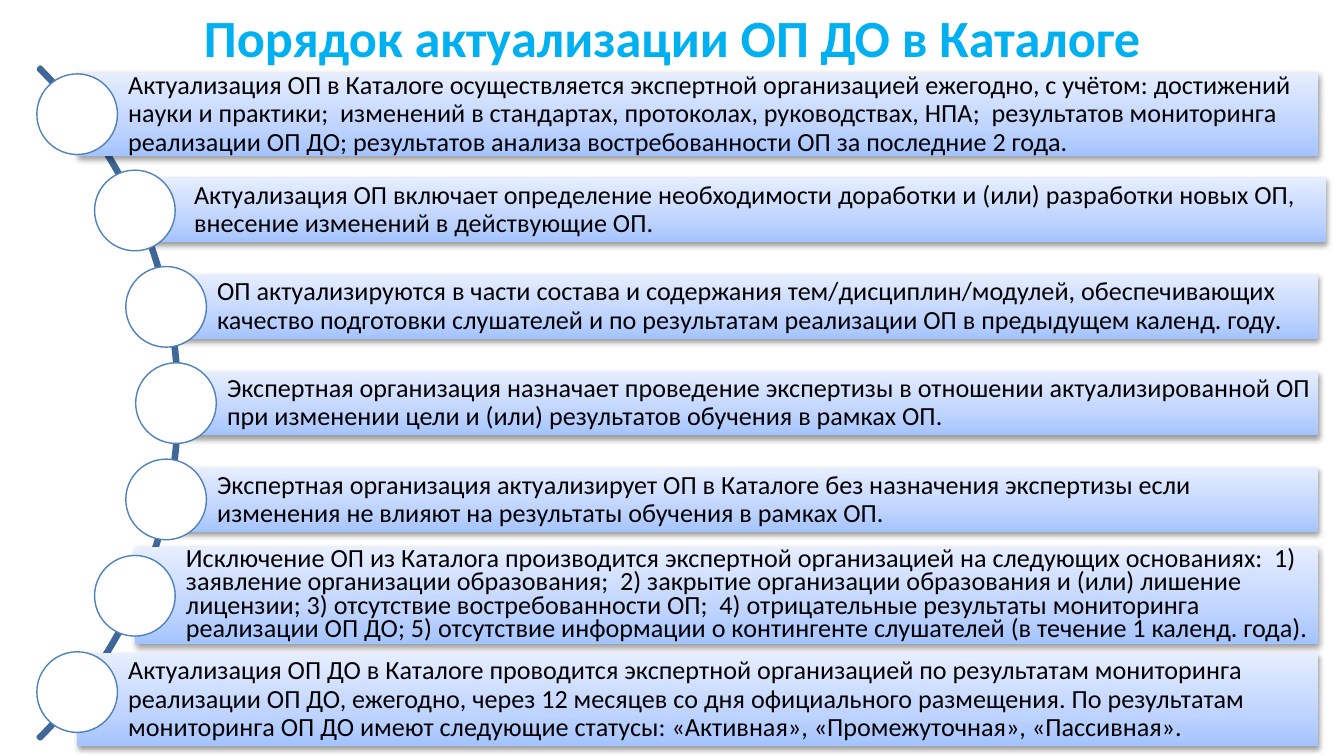
from math import sqrt
from pptx import Presentation
from pptx.dml.color import RGBColor
from pptx.enum.shapes import MSO_SHAPE
from pptx.enum.text import MSO_ANCHOR, MSO_AUTO_SIZE, PP_ALIGN
from pptx.oxml import parse_xml
from pptx.oxml.ns import nsdecls
from pptx.util import Inches, Pt

# Content: text, bar top, bar height, shift of the bar, line spacing
TITLE = "Порядок актуализации ОП ДО в Каталоге"
STEPS = [
    ("Актуализация ОП в Каталоге осуществляется экспертной организацией ежегодно, "
     "с учётом: достижений науки и практики;  изменений в стандартах, протоколах, "
     "руководствах, НПА;  результатов мониторинга реализации ОП ДО; результатов "
     "анализа востребованности ОП за последние 2 года.", 0.54, 0.62, 0, 0.9),
    ("Актуализация ОП включает определение необходимости доработки и (или) "
     "разработки новых ОП, внесение изменений в действующие ОП.",
     1.32, 0.48, 0.06, 0.9),
    ("ОП актуализируются в части состава и содержания тем/дисциплин/модулей, "
     "обеспечивающих качество подготовки слушателей и по результатам реализации "
     "ОП в предыдущем календ. году.", 2.04, 0.48, 0, 0.9),
    ("Экспертная организация назначает проведение экспертизы в отношении "
     "актуализированной ОП при изменении цели и (или) результатов обучения "
     "в рамках ОП.", 2.76, 0.48, 0, 0.9),
    ("Экспертная организация актуализирует ОП в Каталоге без назначения экспертизы "
     "если изменения не влияют на результаты обучения в рамках ОП.",
     3.48, 0.48, 0, 0.9),
    ("Исключение ОП из Каталога производится экспертной организацией на следующих "
     "основаниях:  1)  заявление организации образования;  2) закрытие организации "
     "образования и (или) лишение лицензии; 3) отсутствие востребованности ОП;  "
     "4) отрицательные результаты мониторинга реализации ОП ДО; 5) отсутствие "
     "информации о контингенте слушателей (в течение 1 календ. года).",
     4.07, 0.72, 0, 0.75),
    ("Актуализация ОП ДО в Каталоге проводится экспертной организацией по "
     "результатам мониторинга реализации ОП ДО, ежегодно, через 12 месяцев со дня "
     "официального размещения. По результатам мониторинга ОП ДО имеют следующие "
     "статусы: «Активная», «Промежуточная», «Пассивная».", 4.86, 0.69, 0, 0.9),
]

# Formats
SKY = RGBColor(0x00, 0xB0, 0xF0)
BLACK = RGBColor(0x00, 0x00, 0x00)
WHITE = RGBColor(0xFF, 0xFF, 0xFF)
NAVY = RGBColor(0x3F, 0x67, 0x97)
BLUE = RGBColor(0x4F, 0x81, 0xBD)
STOPS = [(0, "A4C4FF"), (35, "BFD4FF"), (100, "E6EEFF")]
HEAD = {"name": "Calibri", "size": Pt(28), "bold": True}
BODY = {"name": "Calibri", "size": Pt(14)}
FRAME = {"word_wrap": True, "auto_size": MSO_AUTO_SIZE.NONE,
         "vertical_anchor": MSO_ANCHOR.MIDDLE}
PAD = {"margin_left": Inches(0.38), "margin_top": Inches(0.04),
       "margin_right": Inches(0.04), "margin_bottom": Inches(0.04)}

# Geometry: circles sit on an arc, bars start at their centres
WIDE = 10
TALL = WIDE * 9 / 16
MID_X, MID_Y, RADIUS = -2.2, 3.0, 3.51
ARC, DOT, RIGHT = 7.07, 0.6, 9.81
PITCH = 4.3 / (len(STEPS) - 1)


def apply(item, values):
    for key, value in values.items():
        setattr(item, key, value)


def write(frame, text, font, color, align, gap=None):
    apply(frame, FRAME)
    para = frame.paragraphs[0]
    apply(para, {"alignment": align, "line_spacing": gap})
    run = para.add_run()
    run.text = text
    apply(run.font, font)
    run.font.color.rgb = color


def add(kind, left, top, width, height):
    shape = slide.shapes.add_shape(
        kind, Inches(left), Inches(top), Inches(width), Inches(height))
    shape.shadow.inherit = False
    return shape


def shade(shape):
    """Give a bar its three-stop gradient and soft shadow."""
    shape.fill.background()
    shape.line.fill.background()
    props = shape.element.spPr
    stops = "".join(f'<a:gs pos="{pos * 1000}"><a:srgbClr val="{color}"/></a:gs>'
                    for pos, color in STOPS)
    grad = parse_xml(f'<a:gradFill {nsdecls("a")} rotWithShape="1"><a:gsLst>{stops}'
                     '</a:gsLst><a:lin ang="16200000" scaled="0"/></a:gradFill>')
    props.replace(props.find("{*}noFill"), grad)
    cast = parse_xml(
        f'<a:outerShdw {nsdecls("a")} blurRad="{Pt(3.1)}" dist="{Pt(1.6)}" '
        'dir="5400000" rotWithShape="0"><a:srgbClr val="000000">'
        '<a:alpha val="38000"/></a:srgbClr></a:outerShdw>')
    props.find("{*}effectLst").append(cast)


deck = Presentation()
deck.slide_width, deck.slide_height = Inches(WIDE), Inches(TALL)
slide = deck.slides.add_slide(deck.slide_layouts[5])

# Title
title = slide.shapes.title
apply(title, {"left": Inches(0), "top": Inches(0.01),
              "width": Inches(WIDE), "height": Inches(0.52)})
write(title.text_frame, TITLE, HEAD, SKY, PP_ALIGN.CENTER)

# Arc
arc = add(MSO_SHAPE.BLOCK_ARC, MID_X - ARC / 2, MID_Y - ARC / 2, ARC, ARC)
for spot, value in enumerate((189, 27, 0.003)):
    arc.adjustments[spot] = value
arc.fill.background()
arc.line.color.rgb = NAVY
arc.line.width = Pt(2)

# Bars and circles
for row, (text, top, height, shift, gap) in enumerate(STEPS):
    rise = (row - len(STEPS) // 2) * PITCH
    left = MID_X + sqrt(RADIUS ** 2 - rise ** 2)
    bar = add(MSO_SHAPE.RECTANGLE, left + shift, top, RIGHT - left, height)
    shade(bar)
    apply(bar.text_frame, PAD)
    write(bar.text_frame, text, BODY, BLACK, PP_ALIGN.LEFT, gap)

    dot = add(MSO_SHAPE.OVAL, left - DOT / 2, MID_Y + rise - DOT / 2, DOT, DOT)
    dot.fill.solid()
    dot.fill.fore_color.rgb = WHITE
    dot.line.color.rgb = BLUE
    dot.line.width = Pt(0.75)

deck.save("out.pptx")
